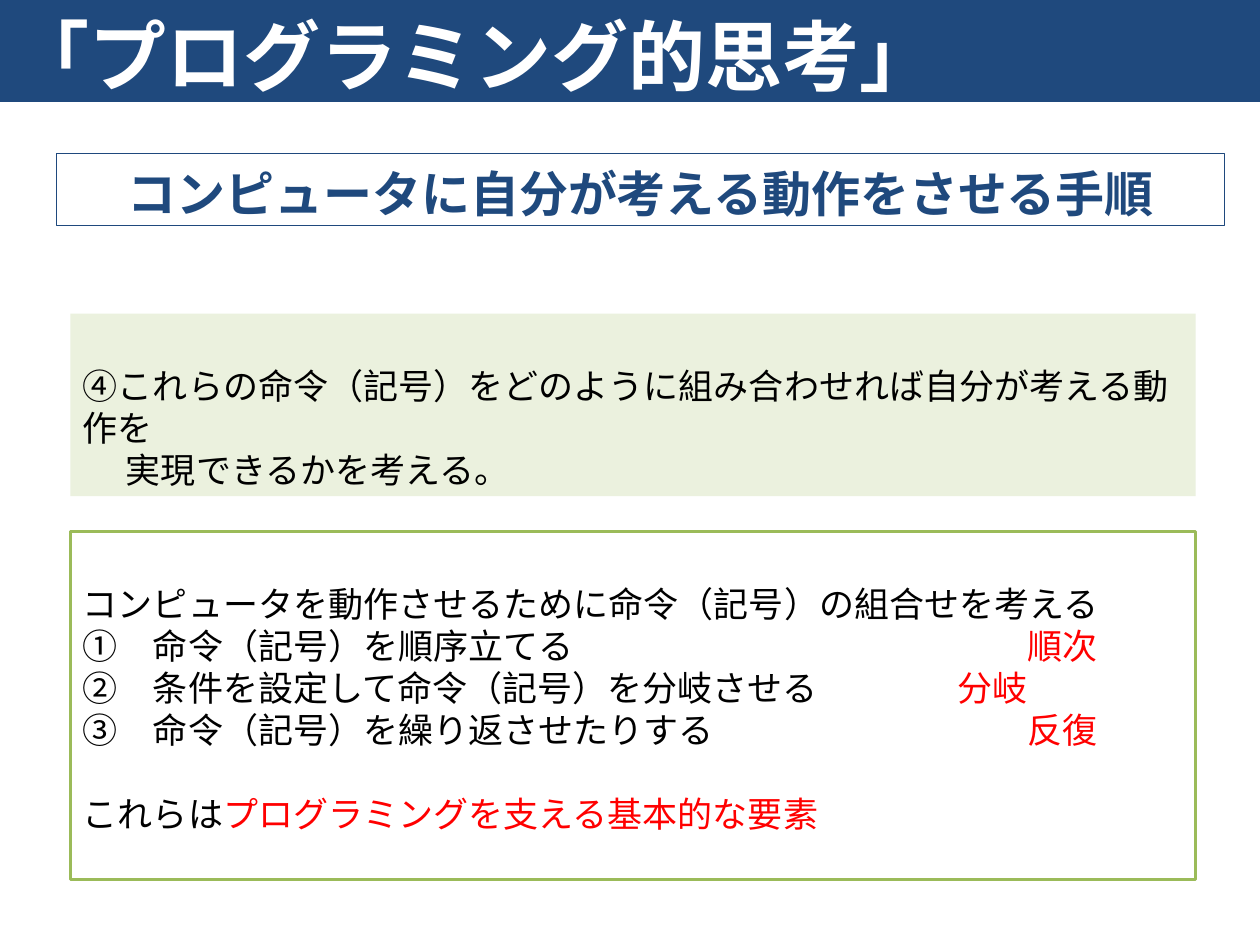
from dataclasses import dataclass

from lxml.etree import SubElement
from pptx import Presentation
from pptx.dml.color import RGBColor
from pptx.enum.shapes import MSO_SHAPE
from pptx.enum.text import MSO_ANCHOR, PP_ALIGN
from pptx.oxml.ns import qn
from pptx.util import Pt


@dataclass(frozen=True)
class Theme:
    """Colours, type sizes and font of the slide."""
    navy: str = "1F497D"
    white: str = "FFFFFF"
    black: str = "000000"
    red: str = "FF0000"
    pale_green: str = "EBF1DE"
    green: str = "9BBB59"
    title: int = 44
    heading: int = 28
    body: int = 20
    leading: float = 1.2
    font: str = "Noto Sans CJK JP"


THEME = Theme()


def add_panel(slide, left, top, width, height, fill=None, line=None, weight=0.75):
    """Add a rectangle with optional fill and outline."""
    panel = slide.shapes.add_shape(
        MSO_SHAPE.RECTANGLE, Pt(left), Pt(top), Pt(width), Pt(height))
    panel.shadow.inherit = False
    if fill:
        panel.fill.solid()
        panel.fill.fore_color.rgb = RGBColor.from_string(fill)
    else:
        panel.fill.background()
    if line:
        panel.line.color.rgb = RGBColor.from_string(line)
        panel.line.width = Pt(weight)
    else:
        panel.line.fill.background()
    return panel


def start_text(panel, size, lead_in=0):
    """Prepare the text frame, leaving lead_in points above the first line."""
    frame = panel.text_frame
    frame.word_wrap = True
    frame.vertical_anchor = MSO_ANCHOR.TOP
    frame.margin_top = Pt(round(3.6 + 0.08 * size + lead_in, 2))
    frame.margin_bottom = Pt(0)
    return frame


def add_line(frame, parts, size, bold=False, align=PP_ALIGN.LEFT,
             indent=0, tab=None, before=0):
    """Write one paragraph from (text, colour) parts."""
    first = frame.paragraphs[0]
    paragraph = frame.add_paragraph() if first.runs else first
    paragraph.alignment = align
    paragraph.line_spacing = Pt(round(size * THEME.leading, 2))
    paragraph.space_before = Pt(before)
    paragraph.font.size = Pt(size)
    paragraph.font.bold = bold
    paragraph.font.name = THEME.font
    properties = paragraph._p.get_or_add_pPr()
    if indent:
        properties.set("marL", str(Pt(indent)))
        properties.set("indent", "0")
    if tab:
        stops = properties.makeelement(qn("a:tabLst"))
        SubElement(stops, qn("a:tab"), pos=str(Pt(tab)), algn="l")
        properties.find(qn("a:defRPr")).addprevious(stops)
    for text, colour in parts:
        run = paragraph.add_run()
        run.text = text
        run.font.color.rgb = RGBColor.from_string(colour)
        run.font.size = Pt(size)
        run.font.bold = bold
        run.font.name = THEME.font
        SubElement(run._r.get_or_add_rPr(), qn("a:ea"), typeface=THEME.font)


def add_title(slide):
    """Add the title band and the boxed heading."""
    band = add_panel(slide, 0, -2.2, 720, 60.5, fill=THEME.navy)
    add_line(start_text(band, THEME.title),
             [("「プログラミング的思考」", THEME.white)], THEME.title, bold=True)
    heading = add_panel(slide, 32.4, 87.8, 667.5, 41, line=THEME.navy)
    add_line(start_text(heading, THEME.heading),
             [("コンピュータに自分が考える動作をさせる手順", THEME.navy)],
             THEME.heading, bold=True, align=PP_ALIGN.CENTER)


def add_question(slide, left, width, blank_line):
    """Add the green panel with step four."""
    panel = add_panel(slide, left, 179.3, width, 104.2, fill=THEME.pale_green)
    frame = start_text(panel, THEME.body, blank_line)
    step = "④これらの命令（記号）をどのように組み合わせれば自分が考える動作を"
    add_line(frame, [(step, THEME.black)], THEME.body)
    add_line(frame, [("実現できるかを考える。", THEME.black)], THEME.body, indent=24.6)


def add_elements(slide, left, width, blank_line):
    """Add the outlined panel with the three basic elements."""
    panel = add_panel(slide, left, 303.8, width, 198.9,
                      fill=THEME.white, line=THEME.green, weight=2)
    frame = start_text(panel, THEME.body, blank_line)
    intro = "コンピュータを動作させるために命令（記号）の組合せを考える"
    add_line(frame, [(intro, THEME.black)], THEME.body)
    elements = [
        ("①　命令（記号）を順序立てる", "順次", 540),
        ("②　条件を設定して命令（記号）を分岐させる", "分岐", 499.5),
        ("③　命令（記号）を繰り返させたりする", "反復", 540),
    ]
    for instruction, name, tab in elements:
        add_line(frame, [(instruction + "\t", THEME.black), (name, THEME.red)],
                 THEME.body, tab=tab)
    add_line(frame, [("これらは", THEME.black),
                     ("プログラミングを支える基本的な要素", THEME.red)],
             THEME.body, before=blank_line)


def main():
    """Build the slide and save it."""
    deck = Presentation()
    deck.slide_width, deck.slide_height = Pt(720), Pt(540)
    slide = deck.slides.add_slide(deck.slide_layouts[6])
    left, width = 40.3, 643
    blank_line = THEME.body * THEME.leading
    add_title(slide)
    add_question(slide, left, width, blank_line)
    add_elements(slide, left, width, blank_line)
    deck.save("out.pptx")


if __name__ == "__main__":
    main()
